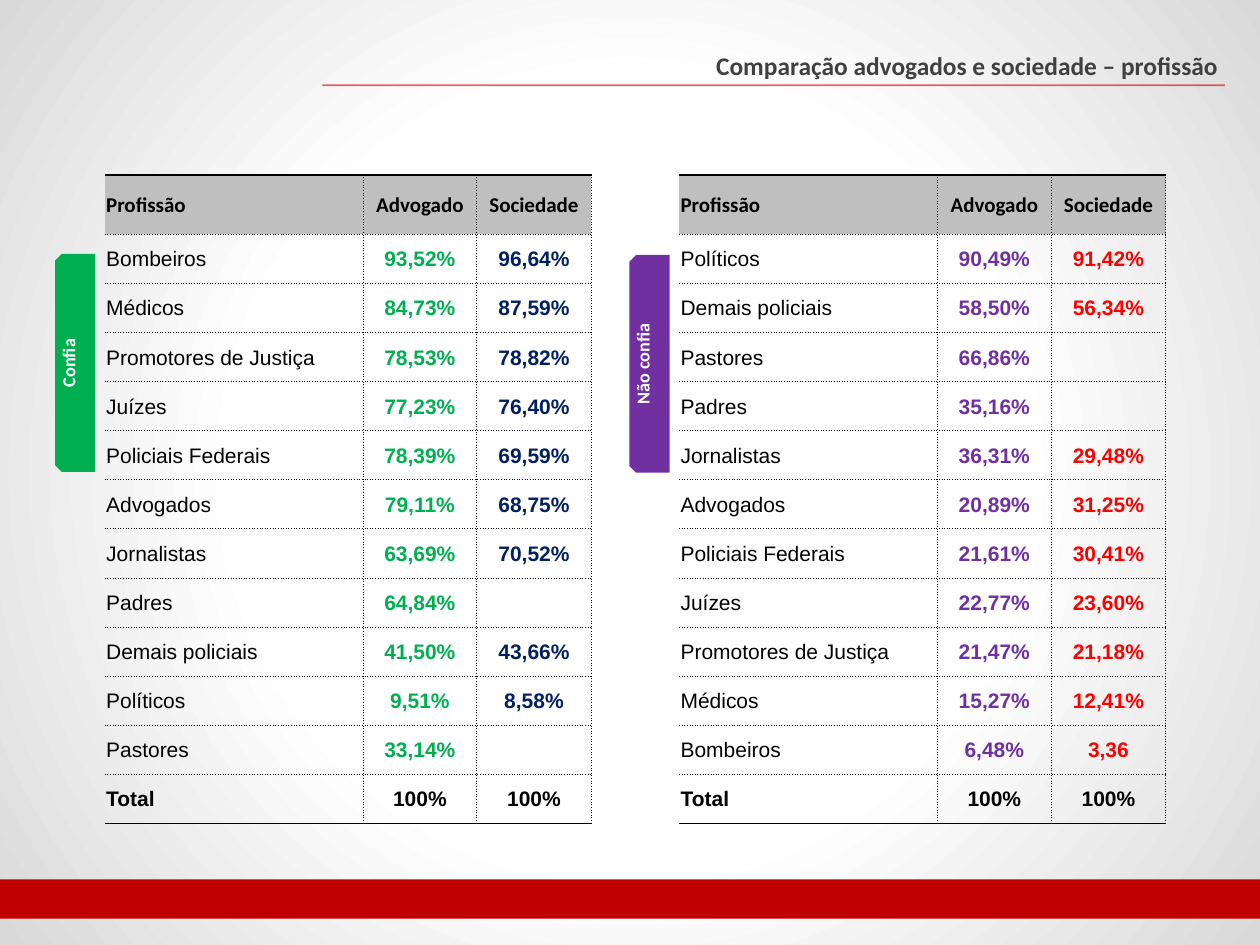
"""Build the slide comparing trust in professions among lawyers and society."""
from pptx import Presentation
from pptx.dml.color import RGBColor
from pptx.enum.shapes import MSO_CONNECTOR, MSO_SHAPE
from pptx.enum.text import MSO_ANCHOR, PP_ALIGN
from pptx.oxml import parse_xml
from pptx.oxml.ns import nsdecls, qn
from pptx.util import Cm, Pt
from lxml.etree import SubElement

BLACK = RGBColor(0x00, 0x00, 0x00)
WHITE = RGBColor(0xFF, 0xFF, 0xFF)
DARK = RGBColor(0x40, 0x40, 0x40)
GRAY = RGBColor(0xBF, 0xBF, 0xBF)
GREEN = RGBColor(0x00, 0xB0, 0x50)
NAVY = RGBColor(0x00, 0x20, 0x60)
PURPLE = RGBColor(0x70, 0x30, 0xA0)
RED = RGBColor(0xFF, 0x00, 0x00)
ROSE = RGBColor(0xCC, 0x00, 0x00)
BRICK = RGBColor(0xC0, 0x00, 0x00)

TITLE = "Comparação advogados e sociedade – profissão "
HEAD = ("Profissão", "Advogado", "Sociedade")
TOTAL = ("Total", "100%", "100%")
TRUST = [
    ("Bombeiros", "93,52%", "96,64%"),
    ("Médicos", "84,73%", "87,59%"),
    ("Promotores de Justiça", "78,53%", "78,82%"),
    ("Juízes", "77,23%", "76,40%"),
    ("Policiais Federais", "78,39%", "69,59%"),
    ("Advogados", "79,11%", "68,75%"),
    ("Jornalistas", "63,69%", "70,52%"),
    ("Padres", "64,84%", ""),
    ("Demais policiais", "41,50%", "43,66%"),
    ("Políticos", "9,51%", "8,58%"),
    ("Pastores", "33,14%", ""),
]
DOUBT = [
    ("Políticos", "90,49%", "91,42%"),
    ("Demais policiais", "58,50%", "56,34%"),
    ("Pastores", "66,86%", ""),
    ("Padres", "35,16%", ""),
    ("Jornalistas", "36,31%", "29,48%"),
    ("Advogados", "20,89%", "31,25%"),
    ("Policiais Federais", "21,61%", "30,41%"),
    ("Juízes", "22,77%", "23,60%"),
    ("Promotores de Justiça", "21,47%", "21,18%"),
    ("Médicos", "15,27%", "12,41%"),
    ("Bombeiros", "6,48%", "3,36"),
]
PANELS = [
    ("Confia", 2.11, 6.91, TRUST, GREEN, NAVY),
    ("Não confia", 13.69, 6.93, DOUBT, PURPLE, RED),
]
COLS = (5.21, 2.29, 2.31)
TOP, HIGH, STEP = 3.53, 1.19, 0.99


def style(para, size, color, name="Calibri", bold=True, align=PP_ALIGN.CENTER):
    para.alignment = align
    font = para.font
    font.size, font.name, font.bold = Pt(size), name, bold
    font.color.rgb = color


def lower(para):
    para._p.get_or_add_pPr().get_or_add_defRPr().set("baseline", "-25000")


def block(slide, kind, x, y, w, h, color):
    shape = slide.shapes.add_shape(kind, Cm(x), Cm(y), Cm(w), Cm(h))
    shape.shadow.inherit = False
    shape.fill.solid()
    shape.fill.fore_color.rgb = color
    shape.line.fill.background()
    return shape


def border(cell, side, width, dash):
    line = SubElement(cell._tc.get_or_add_tcPr(), qn(f"a:ln{side}"), w=str(Pt(width)))
    if not width:
        SubElement(line, qn("a:noFill"))
        return
    fill = SubElement(line, qn("a:solidFill"))
    SubElement(fill, qn("a:srgbClr"), val=str(BLACK))
    SubElement(line, qn("a:prstDash"), val=dash)


def frame(cell, first, head, last):
    thin, thick = (0.5, "sysDot"), (1, "solid")
    border(cell, "L", *((0, "") if first else thin))
    border(cell, "R", *thin)
    border(cell, "T", *(thick if head else thin))
    border(cell, "B", *(thick if last else thin))


def backdrop(slide):
    shape = block(slide, MSO_SHAPE.RECTANGLE, 0, 0, 25.4, 19.05, WHITE)
    stops = "".join(
        f'<a:gs pos="{pos}"><a:srgbClr val="{color}"/></a:gs>'
        for pos, color in ((0, "FFFFFF"), (50000, "FFFFFF"), (100000, "D9D9D9"))
    )
    grad = parse_xml(
        f'<a:gradFill {nsdecls("a")} rotWithShape="1"><a:gsLst>{stops}</a:gsLst>'
        '<a:path path="circle"><a:fillToRect l="50000" t="50000" r="50000" b="50000"/>'
        "</a:path></a:gradFill>"
    )
    props = shape._element.spPr
    props.replace(props.find(qn("a:solidFill")), grad)


def rule(slide):
    line = slide.shapes.add_connector(
        MSO_CONNECTOR.STRAIGHT, Cm(6.5), Cm(1.72), Cm(24.69), Cm(1.72)
    )
    line.line.color.rgb = ROSE
    line.line.width = Pt(1)
    tint = line._element.spPr.find(".//" + qn("a:srgbClr"))
    SubElement(tint, qn("a:alpha"), val="60000")
    SubElement(line._element.spPr, qn("a:effectLst"))


def heading(slide):
    title = slide.shapes.title
    title.left, title.top, title.width, title.height = Cm(5.11), Cm(0.33), Cm(19.81), Cm(1.4)
    title.text_frame.text = TITLE
    title.text_frame.vertical_anchor = MSO_ANCHOR.MIDDLE
    para = title.text_frame.paragraphs[0]
    style(para, 25, DARK, align=PP_ALIGN.RIGHT)
    lower(para)
    slide.shapes._spTree.append(title._element)


def grid(slide, x, body, tones):
    rows = [HEAD, *body, TOTAL]
    end = len(rows) - 1
    table = slide.shapes.add_table(
        len(rows), len(COLS), Cm(x), Cm(TOP), Cm(sum(COLS)), Cm(HIGH + end * STEP)
    ).table
    for col, width in zip(table.columns, COLS):
        col.width = Cm(width)
    for r, row in enumerate(rows):
        table.rows[r].height = Cm(STEP if r else HIGH)
        edge = r in (0, end)
        for c, text in enumerate(row):
            cell = table.cell(r, c)
            cell.text = text
            cell.vertical_anchor = MSO_ANCHOR.MIDDLE
            cell.margin_left = cell.margin_right = cell.margin_top = Cm(0.03)
            cell.margin_bottom = 0
            style(
                cell.text_frame.paragraphs[0], 12, BLACK if edge else tones[c],
                "Arial" if r else "Calibri", edge or c > 0,
                PP_ALIGN.CENTER if c else PP_ALIGN.LEFT,
            )
            frame(cell, c == 0, r == 0, r == end)
            if r:
                cell.fill.background()
            else:
                cell.fill.solid()
                cell.fill.fore_color.rgb = GRAY


def label(slide, text, x, y, color):
    tab = block(slide, MSO_SHAPE.SNIP_2_SAME_RECTANGLE, x - 2.79, y, 4.39, 0.81, color)
    tab.rotation = 270
    box = tab.text_frame
    box.text = text
    box.vertical_anchor = MSO_ANCHOR.MIDDLE
    box.margin_top, box.margin_bottom = 0, Cm(0.78)
    style(box.paragraphs[0], 18, WHITE)
    lower(box.paragraphs[0])


def main():
    deck = Presentation()
    deck.slide_width, deck.slide_height = Cm(25.4), Cm(19.05)
    slide = deck.slides.add_slide(deck.slide_layouts[5])
    backdrop(slide)
    rule(slide)
    block(slide, MSO_SHAPE.RECTANGLE, 0, 17.73, 25.4, 0.79, BRICK)
    heading(slide)
    for text, x, y, body, main_tone, side_tone in PANELS:
        grid(slide, x, body, (BLACK, main_tone, side_tone))
        label(slide, text, x, y, main_tone)
    deck.save("out.pptx")


if __name__ == "__main__":
    main()
